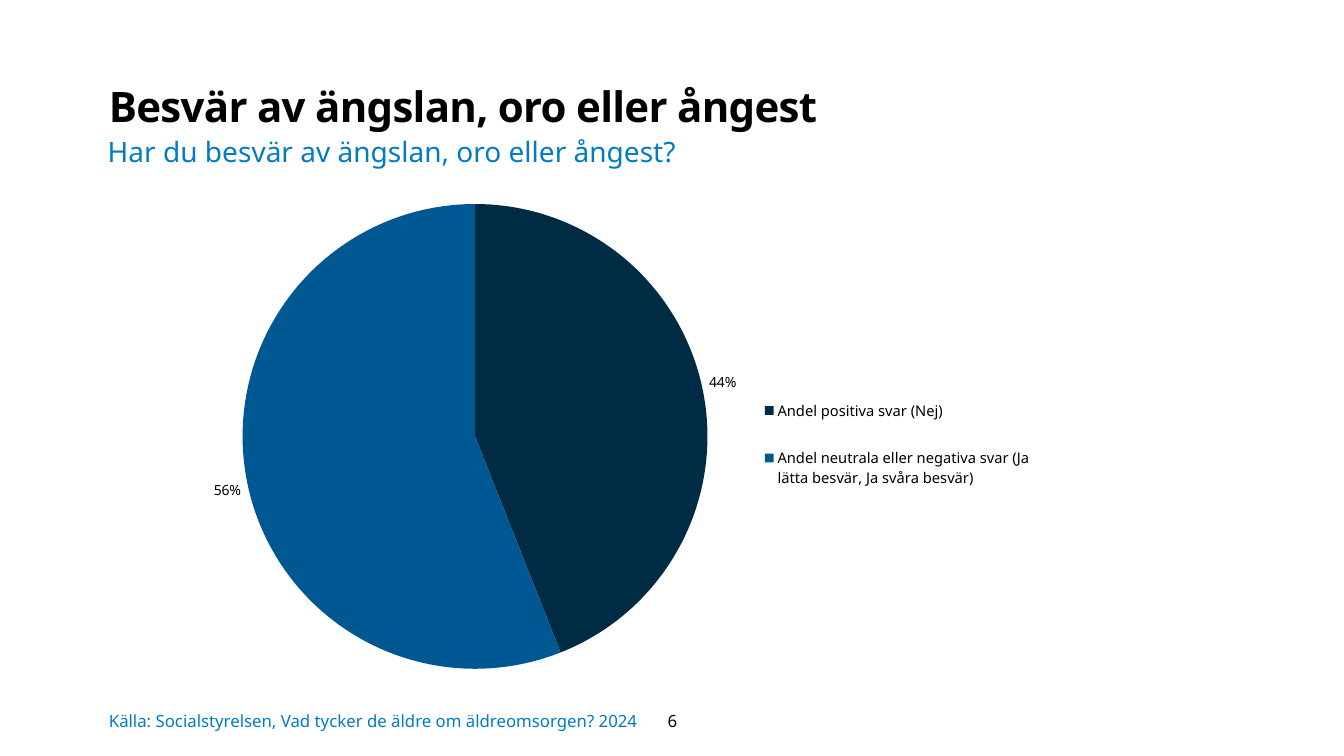
from lxml import etree
from pptx import Presentation
from pptx.chart.data import CategoryChartData
from pptx.dml.color import RGBColor
from pptx.enum import chart as ch, text as tx
from pptx.oxml import ns
from pptx.util import Inches, Pt

TITLE = "Besvär av ängslan, oro eller ångest"
QUERY = "Har du besvär av ängslan, oro eller ångest?"
SOURCE = "Källa: Socialstyrelsen, Vad tycker de äldre om äldreomsorgen? 2024"
PAGE = "6"
SHARES = {
    "Andel positiva svar (Nej)": 44,
    "Andel neutrala eller negativa svar (Ja lätta besvär, Ja svåra besvär)": 56,
}
THEME = {
    "font": "Noto Sans",
    "ink": "000000", "accent": "017CC1", "slices": ("002B45", "005892"),
    "title": 30, "query": 20, "foot": 12, "label": 10, "legend": 10.5,
}


def style(font, size, color="ink"):
    font.name = THEME["font"]
    font.size = Pt(THEME[size])
    font.color.rgb = RGBColor.from_string(THEME[color])


def fill_text(shape, words, size, color="ink", pad=None):
    frame = shape.text_frame
    frame.word_wrap = True
    frame.text = words
    if pad is not None:
        (frame.margin_left, frame.margin_top,
         frame.margin_right, frame.margin_bottom) = map(Inches, pad)
    style(frame.paragraphs[0].runs[0].font, size, color)
    return frame


def add_text(slide, box, *args, **kw):
    return fill_text(slide.shapes.add_textbox(*map(Inches, box)), *args, **kw)


def set_layout(parent, after, box, inner=False):
    """Place a chart part by fractions of the chart, just after a given child."""
    for old in parent.findall(ns.qn("c:layout")):
        parent.remove(old)
    layout = etree.Element(ns.qn("c:layout"))
    manual = etree.SubElement(layout, ns.qn("c:manualLayout"))
    parts = [("layoutTarget", "inner")] if inner else []
    parts += [("xMode", "edge"), ("yMode", "edge"), *zip("xywh", box)]
    for tag, val in parts:
        etree.SubElement(manual, ns.qn("c:" + tag)).set("val", str(val))
    if after is None:
        parent.insert(0, layout)
    else:
        after.addnext(layout)


def add_pie(slide, box):
    data = CategoryChartData()
    data.categories = list(SHARES)
    data.add_series("Series 1", list(SHARES.values()))
    chart = slide.shapes.add_chart(
        ch.XL_CHART_TYPE.PIE, *map(Inches, box), data).chart
    chart.has_title = False
    style(chart.font, "label")

    plot = chart.plots[0]
    plot.vary_by_categories = True
    for i, color in enumerate(THEME["slices"]):
        fill = plot.series[0].points[i].format.fill
        fill.solid()
        fill.fore_color.rgb = RGBColor.from_string(color)

    labels = plot.series[0].data_labels
    labels.show_value = False
    labels.show_percentage = True
    labels.number_format = "0%"
    labels.number_format_is_linked = False
    labels.position = ch.XL_LABEL_POSITION.OUTSIDE_END
    style(labels.font, "label")

    chart.has_legend = True
    legend = chart.legend
    legend.position = ch.XL_LEGEND_POSITION.RIGHT
    legend.include_in_layout = False
    style(legend.font, "legend")

    area = chart._chartSpace.find(".//" + ns.qn("c:plotArea"))
    set_layout(area, None, (0.1, 0.06, 0.48, 0.88), inner=True)
    key = chart._chartSpace.find(".//" + ns.qn("c:legend"))
    set_layout(key, key.find(ns.qn("c:legendPos")), (0.62, 0.38, 0.3, 0.27))


def main():
    deck = Presentation()
    deck.slide_width, deck.slide_height = Inches(13.33), Inches(7.5)
    slide = deck.slides.add_slide(deck.slide_layouts[5])

    title = slide.shapes.title
    title.left, title.top, title.width, title.height = map(
        Inches, (1.08, 0.75, 9.74, 0.54))
    frame = fill_text(title, TITLE, "title", pad=(0, 0, 0.1, 0.05))
    frame.auto_size = tx.MSO_AUTO_SIZE.NONE
    frame.vertical_anchor = tx.MSO_ANCHOR.TOP
    head = frame.paragraphs[0]
    head.alignment = tx.PP_ALIGN.LEFT
    head.line_spacing = 1.1
    head.runs[0].font.bold = True
    head.runs[0]._r.get_or_add_rPr().set("spc", "-50")

    add_text(slide, (0.97, 1.29, 8.78, 0.44), QUERY, "query", "accent")
    add_pie(slide, (1.4, 1.71, 9.74, 5.24))
    foot = add_text(slide, (1.08, 6.93, 8.79, 0.44), SOURCE, "foot", "accent",
                    pad=(0, 0, 0, 0))
    page = add_text(slide, (6.16, 6.95, 1.02, 0.4), PAGE, "foot")
    foot.vertical_anchor = page.vertical_anchor = tx.MSO_ANCHOR.MIDDLE
    page.paragraphs[0].alignment = tx.PP_ALIGN.CENTER
    deck.save("out.pptx")


if __name__ == "__main__":
    main()
